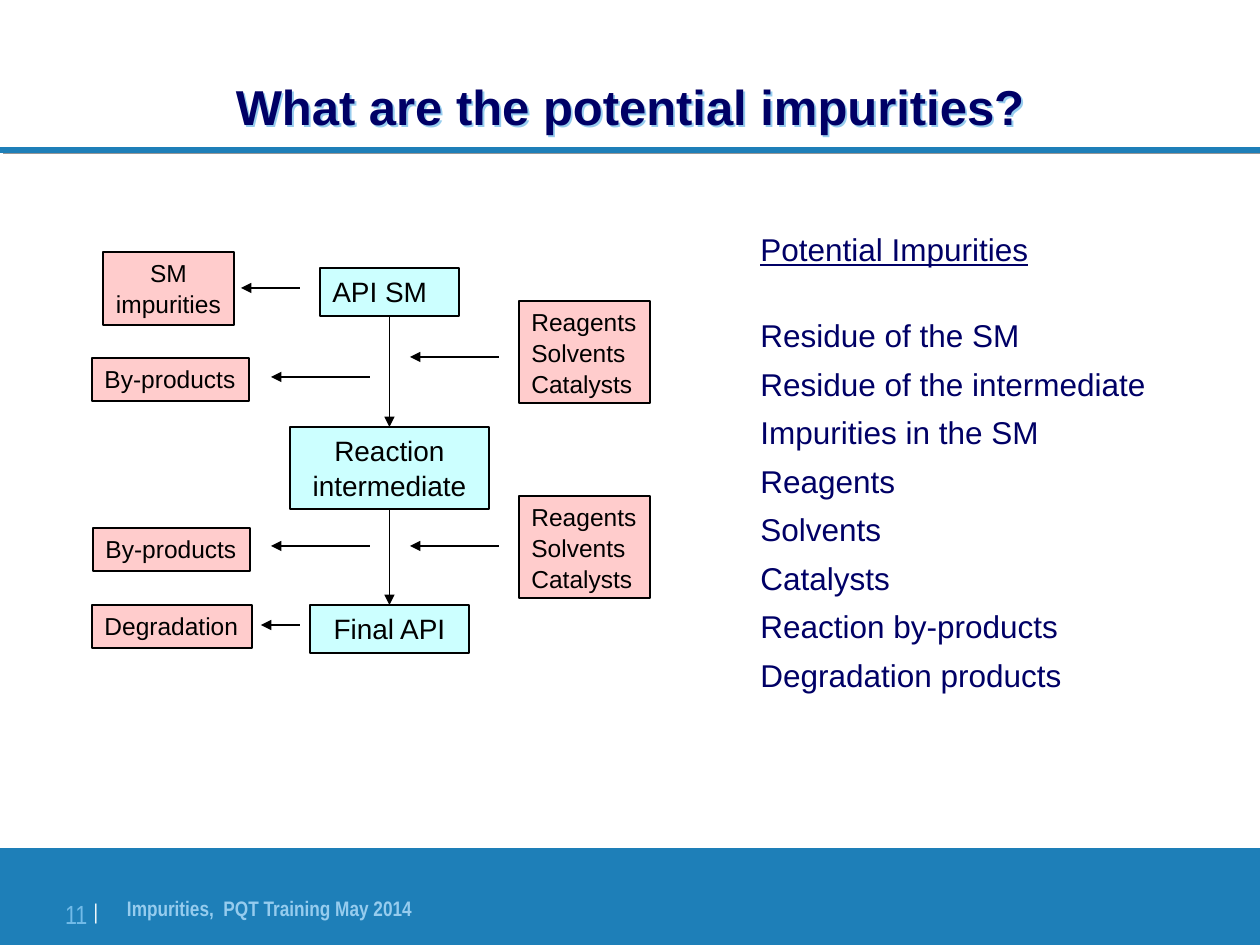
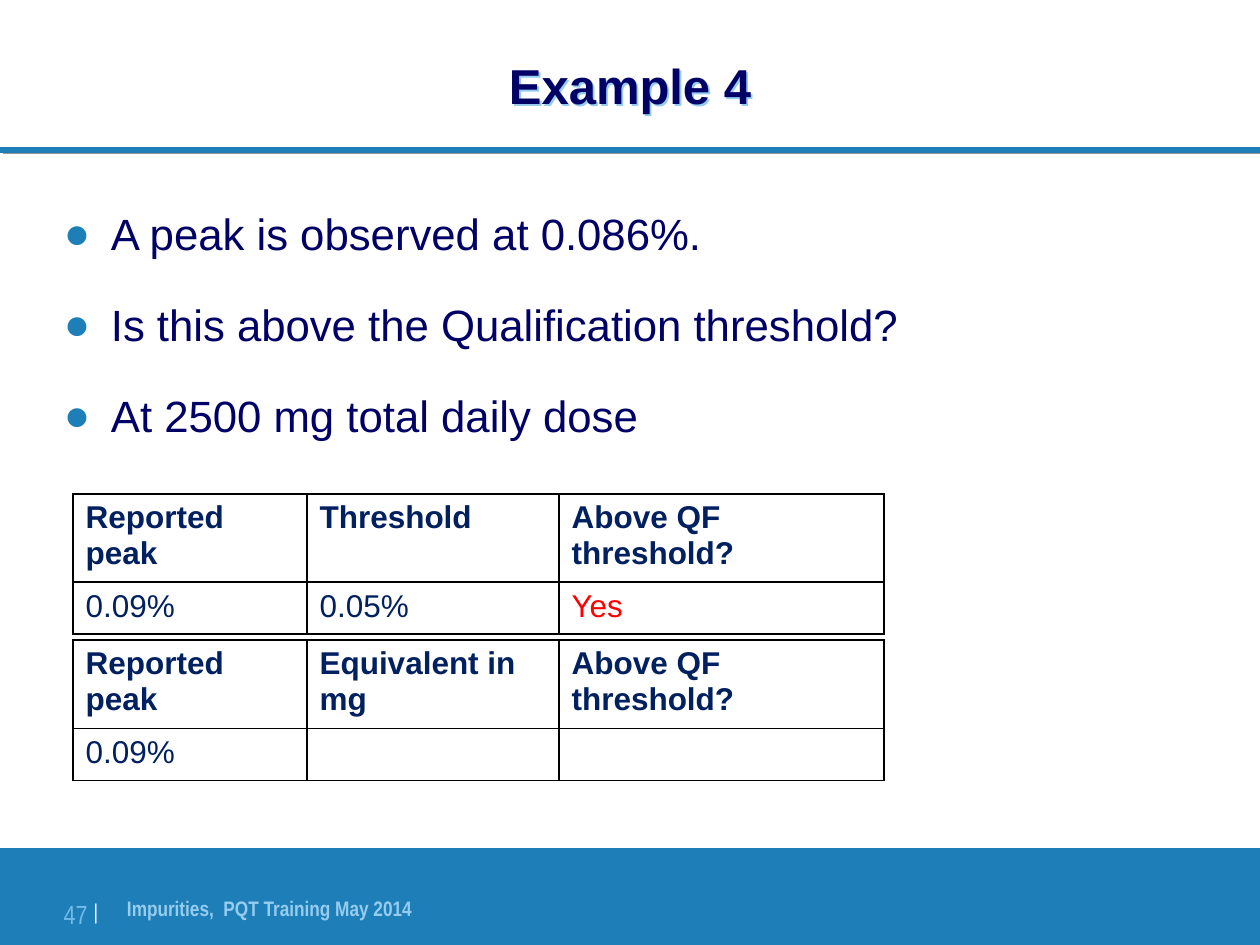
from dataclasses import dataclass
from typing import NamedTuple

from lxml.etree import SubElement
from pptx import Presentation
from pptx.dml.color import RGBColor
from pptx.enum.shapes import MSO_CONNECTOR as Connector, MSO_SHAPE as Shape
from pptx.enum.text import MSO_ANCHOR as Anchor, PP_ALIGN as Align
from pptx.oxml.ns import qn
from pptx.util import Emu, Pt

PX_PER_INCH = 126
SLIDE_WIDTH, SLIDE_HEIGHT = 1260, 945
BLUE, NAVY, TABLE_NAVY = "1E7FB8", "000066", "002060"
CYAN, PINK = "CCFFFF", "FFCCCC"
BLACK, WHITE, RED, GREY = "000000", "FFFFFF", "FF0000", "969696"
FOOTER_BLUE, NUMBER_BLUE = "96CCEE", "72BBE8"
SANS, NARROW = "Arial", "Arial Narrow"
FOOTER = "Impurities,  PQT Training May 2014"


class Area(NamedTuple):
    left: int
    top: int
    width: int
    height: int


@dataclass(frozen=True)
class Style:
    size: int
    color: str = BLACK
    name: str = SANS
    bold: bool = False
    align: Align = Align.LEFT


@dataclass(frozen=True)
class Stage:
    lines: tuple[str, ...]
    area: Area
    align: Align = Align.CENTER


class Arrow(NamedTuple):
    start: int
    end: int
    y: int


TITLE = Style(28, NAVY, bold=True, align=Align.CENTER)
BODY = Style(25, NAVY)
LIST = Style(18, NAVY)
CELL = Style(18, TABLE_NAVY)
HEADER = Style(18, TABLE_NAVY, bold=True)
ANSWER = Style(18, RED)
FOOTER_STYLE = Style(12, FOOTER_BLUE, NARROW, True)

STAGES = [
    Stage(("API SM",), Area(320, 268, 139, 48), Align.LEFT),
    Stage(("Reaction", "intermediate"), Area(290, 427, 199, 82)),
    Stage(("Final API",), Area(310, 605, 159, 48)),
]
INPUTS = ("Reagents", "Solvents", "Catalysts")
SOURCES = [
    Stage(INPUTS, Area(519, 301, 131, 102), Align.LEFT),
    Stage(("Degradation",), Area(92, 605, 160, 43), Align.LEFT),
    Stage(("By-products",), Area(92, 358, 157, 43), Align.LEFT),
    Stage(("By-products",), Area(93, 528, 157, 43), Align.LEFT),
    Stage(("SM", "impurities"), Area(103, 252, 131, 73)),
    Stage(INPUTS, Area(519, 496, 131, 102), Align.LEFT),
]
ARROWS = [
    Arrow(300, 241, 288), Arrow(370, 271, 377), Arrow(370, 271, 546),
    Arrow(300, 261, 625), Arrow(499, 410, 357), Arrow(499, 410, 546),
]
IMPURITIES = [
    "Residue of the SM", "Residue of the intermediate", "Impurities in the SM",
    "Reagents", "Solvents", "Catalysts", "Reaction by-products",
    "Degradation products",
]
QUESTIONS = [
    "A peak is observed at 0.086%.",
    "Is this above the Qualification threshold?",
    "At 2500 mg total daily dose",
]
COLUMN_WIDTHS = (234, 252, 325)
ROW_HEIGHT = 52


def px(length: int) -> Emu:
    return Emu(round(length * 914400 / PX_PER_INCH))


def place(area: Area) -> list[Emu]:
    return [px(length) for length in area]


def rgb(color: str) -> RGBColor:
    return RGBColor.from_string(color)


def write(para, text: str, style: Style) -> None:
    para.text = text
    para.alignment = style.align
    font = para.font
    font.name, font.size, font.bold = style.name, Pt(style.size), style.bold
    font.color.rgb = rgb(style.color)


def write_lines(frame, lines, style: Style, gap: float = 0) -> None:
    for index, text in enumerate(lines):
        para = frame.add_paragraph() if index else frame.paragraphs[0]
        if index:
            para.space_before = Pt(gap)
        write(para, text, style)


def add_text(page, area: Area, inset: bool = False):
    box = page.shapes.add_textbox(*place(area))
    frame = box.text_frame
    frame.word_wrap = not inset
    if not inset:
        frame.margin_left = frame.margin_right = 0
        frame.margin_top = frame.margin_bottom = 0
    return box


def add_shadow(shape, color: str, points: float, degrees: int) -> None:
    effects = SubElement(shape.element.spPr, qn("a:effectLst"))
    shadow = SubElement(effects, qn("a:outerShdw"), dist=str(Pt(points)),
                        dir=str(degrees * 60000), algn="ctr", rotWithShape="0")
    SubElement(shadow, qn("a:srgbClr"), val=color)


def add_line(page, start: tuple[int, int], end: tuple[int, int],
             color: str, width: float):
    line = page.shapes.add_connector(
        Connector.STRAIGHT, *[px(length) for length in start + end])
    line.line.color.rgb = rgb(color)
    line.line.width = Pt(width)
    return line


def add_arrow(page, start: tuple[int, int], end: tuple[int, int]):
    arrow = add_line(page, start, end, BLACK, 0.75)
    properties = arrow.element.spPr
    SubElement(properties.find(qn("a:ln")), qn("a:tailEnd"), type="triangle")
    SubElement(properties, qn("a:effectLst"))
    return arrow


def add_rectangle(page, area: Area, color: str):
    box = page.shapes.add_shape(Shape.RECTANGLE, *place(area))
    box.shadow.inherit = False
    box.fill.solid()
    box.fill.fore_color.rgb = rgb(color)
    box.line.fill.background()
    return box


def add_stage(page, stage: Stage, color: str, size: int, wrap: bool):
    box = add_rectangle(page, stage.area, color)
    box.line.color.rgb = rgb(BLACK)
    box.line.width = Pt(0.75)
    frame = box.text_frame
    frame.word_wrap = wrap
    frame.vertical_anchor = Anchor.TOP
    write_lines(frame, stage.lines, Style(size, align=stage.align), 1)
    return box


def add_page(deck, number: int, title: str, title_area: Area):
    page = deck.slides.add_slide(deck.slide_layouts[6])
    rule = add_line(page, (0, 150), (SLIDE_WIDTH, 150), BLUE, 3)
    add_shadow(rule, GREY, 2.2, 27)
    add_rectangle(page, Area(0, 848, SLIDE_WIDTH, 97), BLUE)

    footer = add_text(page, Area(127, 896, 662, 39))
    write(footer.text_frame.paragraphs[0], FOOTER, FOOTER_STYLE)

    para = add_text(page, Area(49, 888, 49, 45)).text_frame.paragraphs[0]
    para.alignment = Align.RIGHT
    para.font.name = NARROW
    for text, size, color in ((f"{number} ", 15, NUMBER_BLUE), ("|", 21, WHITE)):
        span = para.add_run()
        span.text = text
        span.font.size = Pt(size)
        span.font.color.rgb = rgb(color)
    span.font._element.set("baseline", "14000")

    heading = add_text(page, title_area)
    heading.text_frame.vertical_anchor = Anchor.MIDDLE
    write(heading.text_frame.paragraphs[0], title, TITLE)
    add_shadow(heading, FOOTER_BLUE, 1.6, 45)
    return page


def add_table(page, left: int, top: int, rows) -> None:
    area = Area(left, top, sum(COLUMN_WIDTHS), ROW_HEIGHT * len(rows))
    table = page.shapes.add_table(
        len(rows), len(COLUMN_WIDTHS), *place(area)).table
    table.first_row = table.horz_banding = False
    for column, width in zip(table.columns, COLUMN_WIDTHS):
        column.width = px(width)
    for row_index, row in enumerate(rows):
        table.rows[row_index].height = px(ROW_HEIGHT)
        for column_index, text in enumerate(row):
            cell = table.cell(row_index, column_index)
            style = HEADER if row_index == 0 else ANSWER if text == "Yes" else CELL
            write(cell.text_frame.paragraphs[0], text, style)
            properties = cell._tc.get_or_add_tcPr()
            for side in ("lnL", "lnR", "lnT", "lnB"):
                border = SubElement(properties, qn(f"a:{side}"), w=str(Pt(1)))
                fill = SubElement(border, qn("a:solidFill"))
                SubElement(fill, qn("a:srgbClr"), val=BLACK)
            cell.fill.background()


def build_impurities(deck) -> None:
    page = add_page(deck, 11, "What are the potential impurities?",
                    Area(63, 53, 1134, 105))
    stages = [add_stage(page, stage, CYAN, 16, True) for stage in STAGES]
    for upper, lower in zip(stages, stages[1:]):
        link = add_arrow(page, (0, 0), (0, 0))
        link.begin_connect(upper, 2)
        link.end_connect(lower, 0)
    for source in SOURCES:
        add_stage(page, source, PINK, 14, False)
    for arrow in ARROWS:
        add_arrow(page, (arrow.start, arrow.y), (arrow.end, arrow.y))

    frame = add_text(page, Area(748, 224, 411, 498), inset=True).text_frame
    write_lines(frame, ["Potential Impurities", *IMPURITIES], LIST, 1.8)
    heading, first, *others = frame.paragraphs
    heading.font.underline = True
    first.space_before = Pt(23.3)
    for para in (first, *others):
        para.line_spacing = 1.2


def build_example(deck) -> None:
    page = add_page(deck, 47, "Example 4", Area(0, 0, SLIDE_WIDTH, 170))
    frame = add_text(page, Area(64, 207, 1123, 600)).text_frame
    for index, question in enumerate(QUESTIONS):
        para = frame.add_paragraph() if index else frame.paragraphs[0]
        if index:
            para.space_before = Pt(22)
        properties = para._p.get_or_add_pPr()
        properties.set("marL", str(px(47)))
        properties.set("indent", str(px(-47)))
        color = SubElement(properties, qn("a:buClr"))
        SubElement(color, qn("a:srgbClr"), val=BLUE)
        SubElement(properties, qn("a:buFont"), typeface=SANS)
        SubElement(properties, qn("a:buChar"), char="●")
        write(para, question, BODY)

    for top, measure, values in (
        (494, "Threshold", ("0.09%", "0.05%", "Yes")),
        (640, "Equivalent in mg", ("0.09%", "", "")),
    ):
        header = ("Reported peak", measure, "Above QF threshold?")
        add_table(page, 73, top, (header, values))


def main() -> None:
    deck = Presentation()
    deck.slide_width, deck.slide_height = px(SLIDE_WIDTH), px(SLIDE_HEIGHT)
    build_impurities(deck)
    build_example(deck)
    deck.save("out.pptx")


if __name__ == "__main__":
    main()
